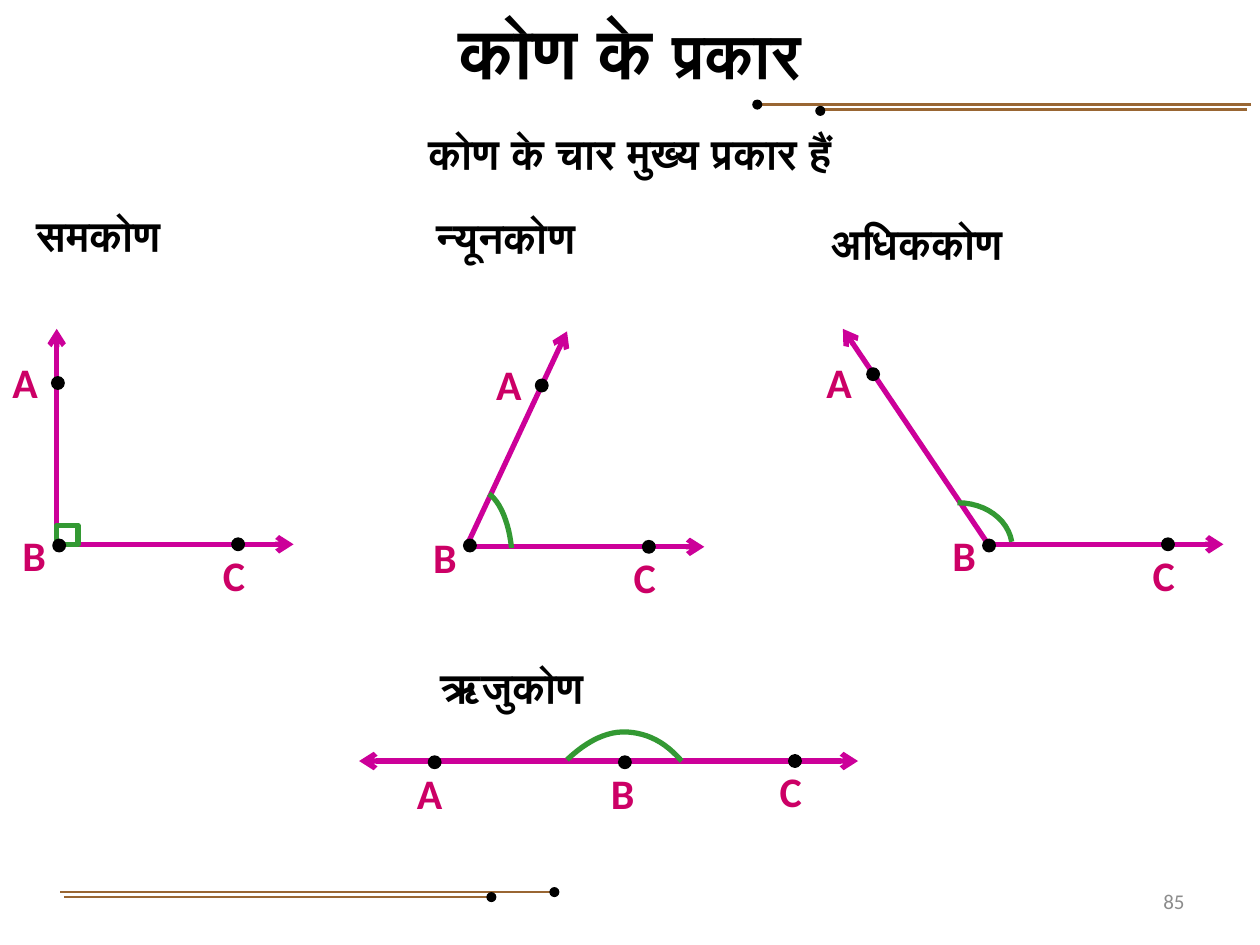
"""Build the slide on the four main types of angle."""
from lxml import etree
from pptx import Presentation
from pptx.dml.color import RGBColor
from pptx.enum.shapes import MSO_CONNECTOR, MSO_SHAPE
from pptx.enum.text import MSO_ANCHOR, MSO_AUTO_SIZE, PP_ALIGN
from pptx.oxml.ns import qn
from pptx.util import Inches, Pt

BLACK = RGBColor(0x00, 0x00, 0x00)
GREY = RGBColor(0x8C, 0x8C, 0x8C)
BROWN = RGBColor(0x99, 0x66, 0x33)
MAGENTA = RGBColor(0xCC, 0x00, 0x99)
PINK = RGBColor(0xCC, 0x00, 0x66)
GREEN = RGBColor(0x33, 0x99, 0x33)

prs = Presentation()
prs.slide_width, prs.slide_height = Inches(10), Inches(7.5)
s = prs.slides.add_slide(prs.slide_layouts[6])


def add_text(runs, x, y, w, h, color=BLACK, bold=True, align=PP_ALIGN.LEFT,
             anchor=MSO_ANCHOR.TOP, wrap=True, fit=MSO_AUTO_SIZE.SHAPE_TO_FIT_TEXT):
    tf = s.shapes.add_textbox(Inches(x), Inches(y), Inches(w), Inches(h)).text_frame
    for name, value in {"word_wrap": wrap, "auto_size": fit, "vertical_anchor": anchor}.items():
        setattr(tf, name, value)
    p = tf.paragraphs[0]
    p.alignment = align
    for text, size in runs:
        r = p.add_run()
        r.text = text
        for name, value in {"name": "Calibri", "size": Pt(size), "bold": bold}.items():
            setattr(r.font, name, value)
        r.font.color.rgb = color


def add_line(x1, y1, x2, y2, color, width, ends=()):
    c = s.shapes.add_connector(MSO_CONNECTOR.STRAIGHT, Inches(x1), Inches(y1), Inches(x2), Inches(y2))
    c.line.color.rgb = color
    c.line.width = Pt(width)
    for end in ends:
        etree.SubElement(c.line._get_or_add_ln(), qn(f"a:{end}"), type="arrow")
    etree.SubElement(c._element.spPr, qn("a:effectLst"))


for x1, x2, y in [(4.41, 0.48, 7.08), (3.9, 0.51, 7.12), (6, 9.93, 0.83), (6.51, 9.9, 0.87)]:
    add_line(x1, y, x2, y, BROWN, 1.5)

add_text([("कोण के ", 40), ("प्रकार", 36)], 0, 0.02, 10, 0.77, align=PP_ALIGN.CENTER)
add_text([("कोण के चार मुख्य प्रकार हैं", 24)], 0, 0.96, 10, 0.5,
         align=PP_ALIGN.CENTER, anchor=MSO_ANCHOR.MIDDLE)
for name, x, y, w in [("समकोण", 0.19, 1.61, 2.31), ("न्यूनकोण", 3.37, 1.63, 2.67),
                      ("अधिककोण", 6.5, 1.68, 2.85), ("ऋजुकोण", 3.4, 5.2, 3.25)]:
    add_text([(name, 24)], x, y, w, 0.5)

rule_dots = [(3.86, 7.08), (4.36, 7.04), (6.47, 0.84), (5.97, 0.79)]
point_dots = [(3.4, 6), (4.91, 6), (6.26, 5.99)]
labels = [("A", 3.21, 6.04), ("B", 4.75, 6.04), ("C", 6.09, 6.03)]
add_line(2.85, 6.04, 6.81, 6.04, MAGENTA, 3, ("headEnd", "tailEnd"))

for dx, dy, tip_x, a_dot, a_label in [(0, 0, 0.45, (0.41, 2.99), (0, 2.78)),
                                      (3.26, 0.02, 4.5, (4.25, 3.01), (3.84, 2.8)),
                                      (7.38, 0, 6.69, (6.88, 2.92), (6.46, 2.78))]:
    add_line(tip_x, 2.61 + dy, 0.45 + dx, 4.3 + dy, MAGENTA, 3, ["headEnd"])
    add_line(0.43 + dx, 4.32 + dy, 2.33 + dx, 4.32 + dy, MAGENTA, 3, ["tailEnd"])
    point_dots += [a_dot, (0.42 + dx, 4.28), (1.84 + dx, 4.27 + dy)]
    labels += [("A", *a_label), ("B", 0.08 + dx, 4.15 + dy), ("C", 1.67 + dx, 4.31 + dy)]

square = s.shapes.add_shape(MSO_SHAPE.RECTANGLE, Inches(0.45), Inches(4.17), Inches(0.17), Inches(0.15))
marks = [square]
for curves in [[[(5.41, 6.04), (5.28, 5.89), (5.14, 5.82), (4.98, 5.81)],
                [(4.98, 5.81), (4.82, 5.8), (4.66, 5.88), (4.5, 6.03)]],
               [[(3.88, 3.92), (3.97, 3.98), (4.04, 4.15), (4.06, 4.35)]],
               [[(7.6, 3.99), (7.82, 3.99), (8, 4.12), (8.03, 4.3)]]]:
    pts = []
    for curve in curves:
        for t in [i / 12 for i in range(13)]:
            weights = ((1 - t) ** 3, 3 * t * (1 - t) ** 2, 3 * t ** 2 * (1 - t), t ** 3)
            pts.append(tuple(Inches(sum(k * v for k, v in zip(weights, axis))) for axis in zip(*curve)))
    fb = s.shapes.build_freeform(*pts[0])
    fb.add_line_segments(pts[1:], close=False)
    marks.append(fb.convert_to_shape())
for sp in marks:
    sp.shadow.inherit = False
    sp.fill.background()
    sp.line.color.rgb = GREEN
    sp.line.width = Pt(3)

for dots, size, outline in [(rule_dots, 0.08, False), (point_dots, 0.1, True)]:
    for x, y in dots:
        sp = s.shapes.add_shape(MSO_SHAPE.OVAL, Inches(x), Inches(y), Inches(size), Inches(size))
        sp.shadow.inherit = False
        sp.fill.solid()
        sp.fill.fore_color.rgb = BLACK
        if outline:
            sp.line.color.rgb = BLACK
            sp.line.width = Pt(0.75)
        else:
            sp.line.fill.background()

for letter, x, y in labels:
    add_text([(letter, 24)], x, y, 0.44, 0.5, color=PINK, wrap=False)

add_text([("85", 12)], 7.17, 6.95, 2.33, 0.4, color=GREY, bold=False, align=PP_ALIGN.RIGHT,
         anchor=MSO_ANCHOR.MIDDLE, fit=MSO_AUTO_SIZE.NONE)

prs.save("out.pptx")
